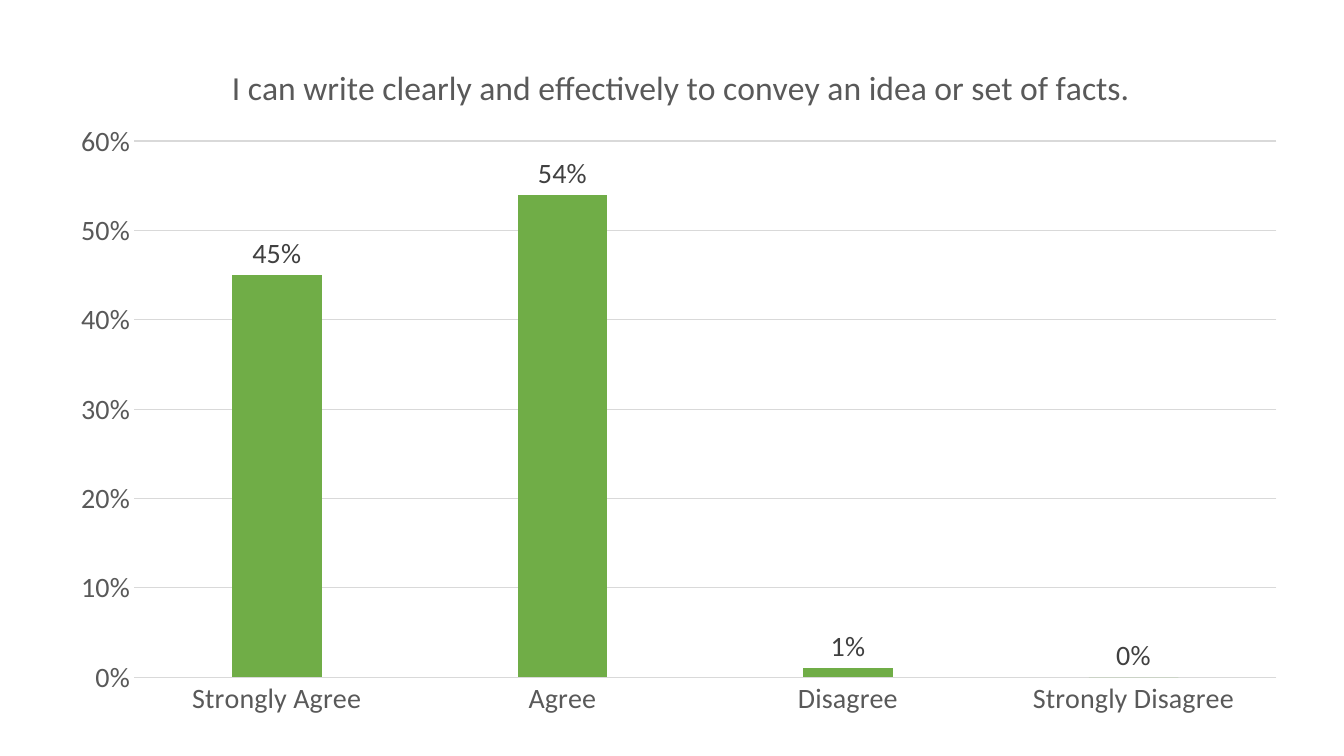
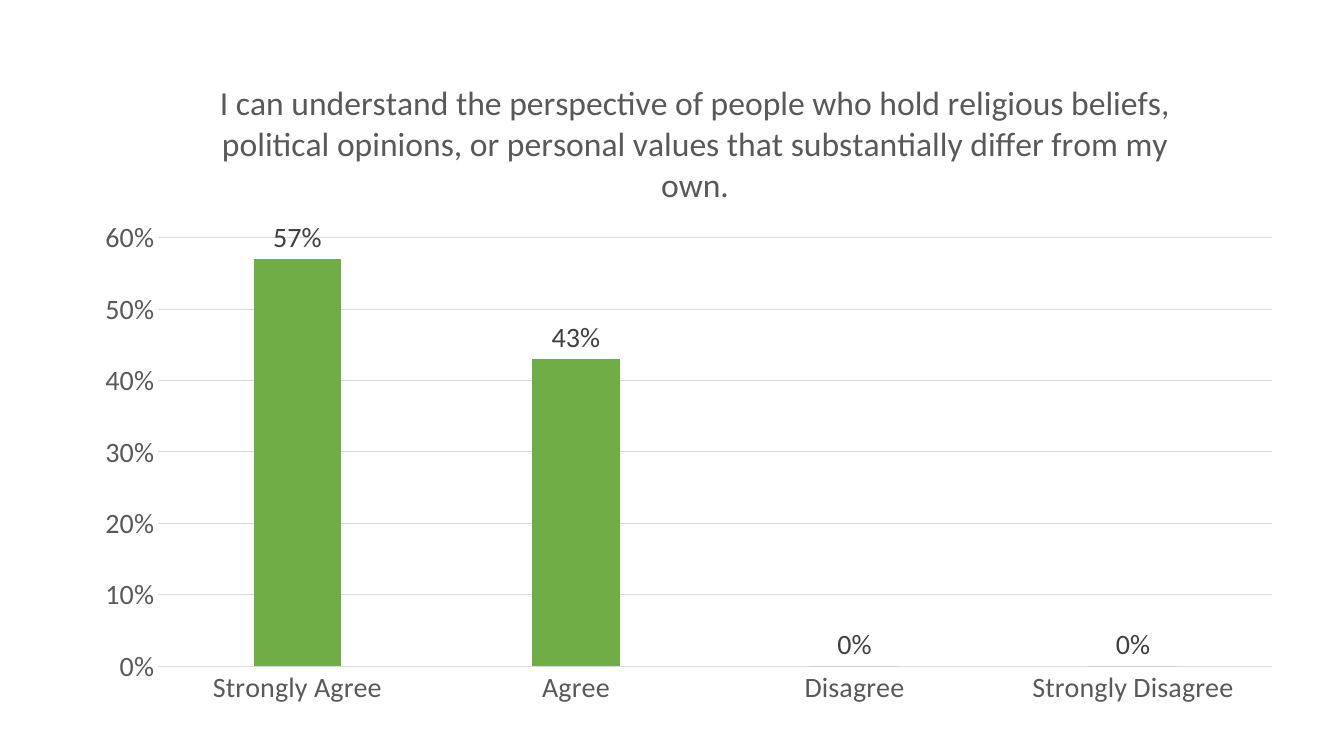
from lxml import etree
from pptx import Presentation
from pptx.chart.data import CategoryChartData
from pptx.dml.color import RGBColor
from pptx.enum.chart import XL_CHART_TYPE, XL_LABEL_POSITION, XL_TICK_MARK
from pptx.oxml.ns import qn
from pptx.util import Inches, Pt

# Shared style
FONT = "Calibri"
GREEN = RGBColor(0x70, 0xAD, 0x47)
TEXT_GRAY = RGBColor(0x59, 0x59, 0x59)
LABEL_GRAY = RGBColor(0x40, 0x40, 0x40)
LINE_GRAY = RGBColor(0xD9, 0xD9, 0xD9)
CATEGORIES = ["Strongly Agree", "Agree", "Disagree", "Strongly Disagree"]

# Boxes are left, top, width, height in inches on the slide
QUESTIONS = [
    {
        "title": "I can write clearly and effectively to convey an idea or set of facts.",
        "values": [0.45, 0.54, 0.01, 0],
        "frame": (0.56, 0.29, 12.35, 6.95),
        "plot": (1.33, 1.4, 11.33, 5.32),
        "title_at": (2.24, 0.58),
    },
    {
        "title": "I can understand the perspective of people who hold religious beliefs, "
                 "political opinions, or personal values that substantially differ from my own.",
        "values": [0.57, 0.43, 0, 0],
        "frame": (0.8, 0.45, 12.06, 6.68),
        "plot": (1.57, 2.36, 11.05, 4.25),
        "title_at": (2.12, 0.73),
    },
]


def set_font(font, size, color):
    font.name = FONT
    font.size = Pt(size)
    font.bold = False
    font.color.rgb = color


def set_line(line):
    line.color.rgb = LINE_GRAY
    line.width = Pt(0.75)


def place(parent, frame, box, index, inner=False):
    """Place a chart part at a slide box, as fractions of the chart frame."""
    left, top, width, height = frame
    for old in parent.findall(qn("c:layout")):
        parent.remove(old)
    layout = etree.Element(qn("c:layout"))
    manual = etree.SubElement(layout, qn("c:manualLayout"))

    def add(tag, value):
        etree.SubElement(manual, qn(f"c:{tag}")).set("val", str(value))

    if inner:
        add("layoutTarget", "inner")
    add("xMode", "edge")
    add("yMode", "edge")
    fractions = [(box[0] - left) / width, (box[1] - top) / height]
    if len(box) == 4:
        fractions += [box[2] / width, box[3] / height]
    for tag, value in zip("xywh", fractions):
        add(tag, value)
    parent.insert(index, layout)


def style_axes(chart):
    cat, val = chart.category_axis, chart.value_axis
    for axis in (cat, val):
        axis.major_tick_mark = XL_TICK_MARK.NONE
        axis.minor_tick_mark = XL_TICK_MARK.NONE
        set_font(axis.tick_labels.font, 20, TEXT_GRAY)
    set_line(cat.format.line)
    val.format.line.fill.background()
    val.minimum_scale, val.maximum_scale, val.major_unit = 0, 0.6, 0.1
    val.has_major_gridlines = True
    set_line(val.major_gridlines.format.line)
    val.tick_labels.number_format = "0%"
    val.tick_labels.number_format_is_linked = False


def style_bars(plot):
    plot.vary_by_categories = False
    plot.gap_width = 219
    plot.overlap = -27
    fill = plot.series[0].format.fill
    fill.solid()
    fill.fore_color.rgb = GREEN
    plot.has_data_labels = True
    labels = plot.data_labels
    labels.show_value = True
    labels.position = XL_LABEL_POSITION.OUTSIDE_END
    labels.number_format = "0%"
    labels.number_format_is_linked = False
    set_font(labels.font, 20, LABEL_GRAY)


def add_title(chart, text, frame, position):
    chart.has_title = True
    title = chart.chart_title
    title.include_in_layout = False
    p = title.text_frame.paragraphs[0]
    p.text = text
    set_font(p.font, 24, TEXT_GRAY)
    place(title._element, frame, position, 1)


def add_question_slide(prs, question):
    s = prs.slides.add_slide(prs.slide_layouts[6])
    data = CategoryChartData(number_format="0%")
    data.categories = CATEGORIES
    data.add_series("Series 1", question["values"])
    frame = question["frame"]
    chart = s.shapes.add_chart(
        XL_CHART_TYPE.COLUMN_CLUSTERED, *map(Inches, frame), data).chart
    chart.has_legend = False
    chart.font.name = FONT
    chart.font.size = Pt(20)
    add_title(chart, question["title"], frame, question["title_at"])
    style_axes(chart)
    style_bars(chart.plots[0])
    place(chart._chartSpace.chart.plotArea, frame, question["plot"], 0, inner=True)


def main():
    prs = Presentation()
    prs.slide_width, prs.slide_height = Inches(13.33), Inches(7.5)
    for question in QUESTIONS:
        add_question_slide(prs, question)
    prs.save("out.pptx")


if __name__ == "__main__":
    main()
